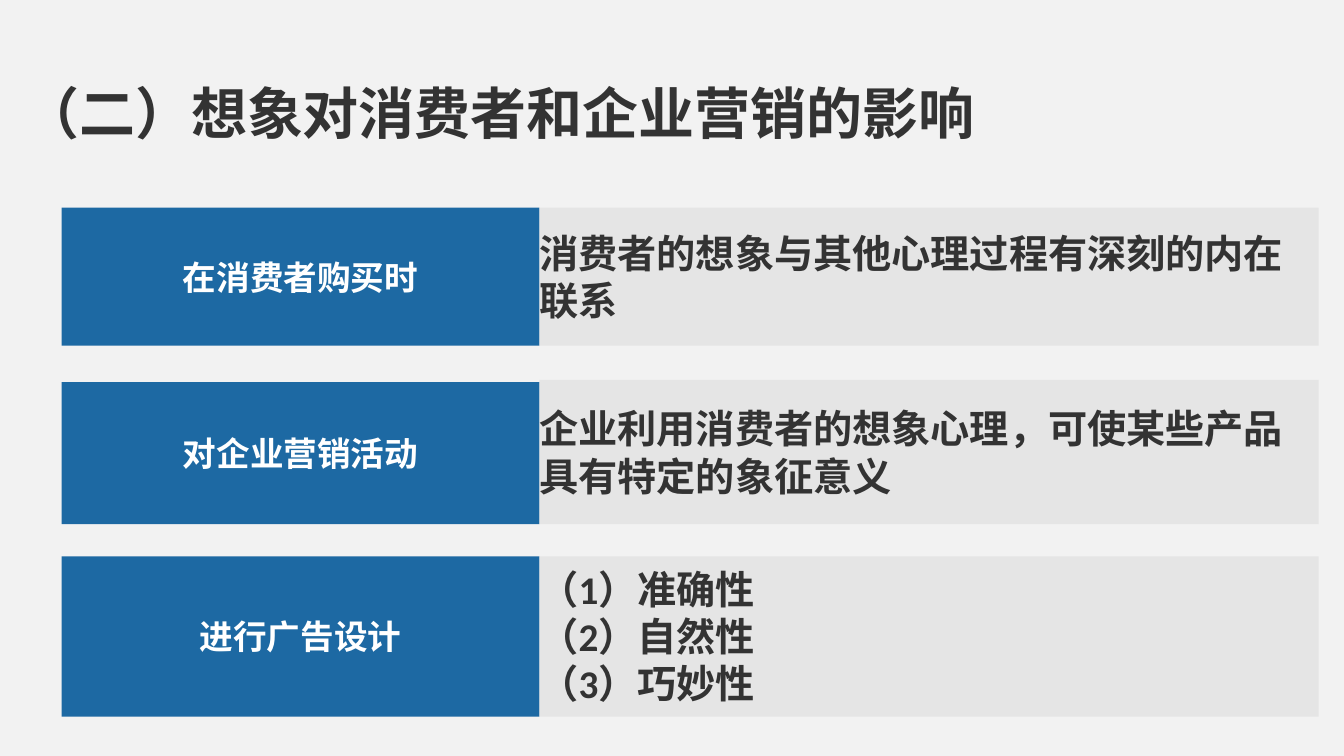
"""Builds a slide on how imagination affects consumers and company marketing."""
from lxml import etree
from pptx import Presentation
from pptx.dml.color import RGBColor
from pptx.enum.lang import MSO_LANGUAGE_ID
from pptx.enum.shapes import MSO_SHAPE
from pptx.enum.text import MSO_ANCHOR, MSO_AUTO_SIZE, PP_ALIGN
from pptx.oxml.ns import qn
from pptx.util import Pt

RECTANGLE = MSO_SHAPE.RECTANGLE
CHINESE = MSO_LANGUAGE_ID.SIMPLIFIED_CHINESE
MIDDLE = MSO_ANCHOR.MIDDLE
GROW = MSO_AUTO_SIZE.SHAPE_TO_FIT_TEXT
LEFT, CENTER = PP_ALIGN.LEFT, PP_ALIGN.CENTER

LABEL_LEFT, LABEL_WIDTH = 44, 341.3
PANEL_LEFT, PANEL_WIDTH = LABEL_LEFT + LABEL_WIDTH, 556.6
LINE_HEIGHT = 33.8

EFFECTS = [
    ("在消费者购买时", ["消费者的想象与其他心理过程有深刻的内在联系"],
     2, 556.6, 148.3, 98.6, 0),
    ("对企业营销活动", ["企业利用消费者的想象心理，可使某些产品具有特定的象征意义"],
     2, 556.6, 271.4, 103, 1.5),
    ("进行广告设计", ["（1）准确性", "（2）自然性", "（3）巧妙性"],
     3, 327.6, 397.4, 114.5, 0),
]


def color(value):
    return RGBColor.from_string(value)


class EffectSlide:
    font = "Calibri"
    ink, white, blue, gray, paper = "333333", "FFFFFF", "1D69A3", "D9D9D9", "F2F2F2"

    def __init__(self, deck):
        self.slide = deck.slides.add_slide(deck.slide_layouts[6])
        background = self.slide.background.fill
        background.solid()
        background.fore_color.rgb = color(self.paper)

    def add_lines(self, frame, lines, size, ink, align=LEFT, spacing=None):
        for index, line in enumerate(lines):
            paragraph = frame.add_paragraph() if index else frame.paragraphs[0]
            paragraph.alignment = align
            paragraph.line_spacing = spacing
            run = paragraph.add_run()
            run.text = line
            run.font.name, run.font.size, run.font.bold = self.font, Pt(size), True
            run.font.color.rgb = color(ink)
            run.font.language_id = CHINESE
            east_asian = etree.Element(qn("a:ea"), typeface=self.font)
            run.font._element.find(qn("a:latin")).addnext(east_asian)

    def text(self, shapes, lines, left, top, width, height, size, spacing=None):
        box = shapes.add_textbox(Pt(left), Pt(top), Pt(width), Pt(height))
        frame = box.text_frame
        frame.margin_left = frame.margin_right = frame.margin_top = frame.margin_bottom = 0
        frame.word_wrap = True
        frame.auto_size = GROW
        self.add_lines(frame, lines, size, self.ink, spacing=spacing)

    def block(self, shapes, left, top, width, height, fill, opacity=100):
        block = shapes.add_shape(RECTANGLE, Pt(left), Pt(top), Pt(width), Pt(height))
        block.shadow.inherit = False
        block.line.fill.background()
        block.fill.solid()
        block.fill.fore_color.rgb = color(fill)
        if opacity < 100:
            tint = block._element.spPr.find(qn("a:solidFill"))[0]
            etree.SubElement(tint, qn("a:alpha"), val=str(opacity * 1000))
        return block

    def effect(self, topic, details, line_count, text_width, top, height, label_drop):
        shapes = self.slide.shapes.add_group_shape().shapes
        label = self.block(shapes, LABEL_LEFT, top + label_drop, LABEL_WIDTH,
                           height - label_drop, self.blue)
        label.text_frame.vertical_anchor = MIDDLE
        label.text_frame.word_wrap = True
        self.add_lines(label.text_frame, [topic], 24, self.white, CENTER)
        self.block(shapes, PANEL_LEFT, top, PANEL_WIDTH, height, self.gray, 50)
        text_height = line_count * LINE_HEIGHT
        self.text(shapes, details, PANEL_LEFT, top + (height - text_height) / 2,
                  text_width, text_height, 28)


def main():
    deck = Presentation()
    deck.slide_width, deck.slide_height = Pt(960), Pt(540)
    page = EffectSlide(deck)
    page.text(page.slide.shapes, ["（二）想象对消费者和企业营销的影响"],
              16.6, 46.8, 694, 58.3, 40, 1.2)
    for effect in EFFECTS:
        page.effect(*effect)
    deck.save("out.pptx")


if __name__ == "__main__":
    main()
